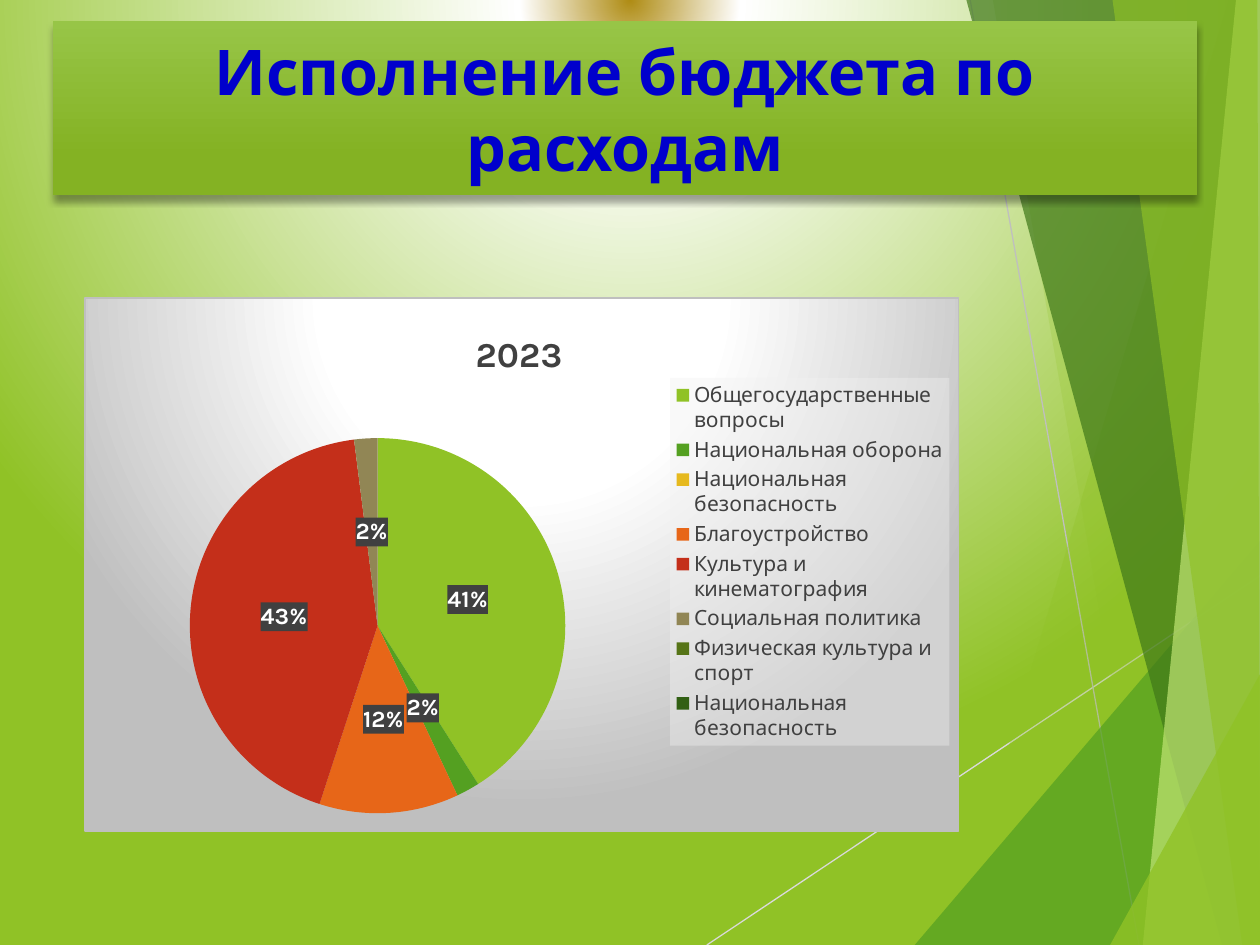
"""Build a slide showing budget spending by section as a pie chart."""
from pptx import Presentation
from pptx.chart.data import CategoryChartData
from pptx.dml.color import RGBColor
from pptx.enum.chart import XL_CHART_TYPE, XL_LABEL_POSITION, XL_LEGEND_POSITION
from pptx.enum.shapes import MSO_CONNECTOR
from pptx.enum.text import MSO_ANCHOR, PP_ALIGN
from pptx.oxml import parse_xml
from pptx.oxml.ns import qn
from pptx.util import Inches, Pt

TITLE = "Исполнение бюджета по расходам"
YEAR = "2023"
SPENDING = [
    ("Общегосударственные вопросы", 41, "90C226"),
    ("Национальная оборона", 2, "54A021"),
    ("Национальная безопасность", 0, "E6B91E"),
    ("Благоустройство", 12, "E76618"),
    ("Культура и кинематография", 43, "C42F1A"),
    ("Социальная политика", 2, "918655"),
    ("Физическая культура и спорт", 0, "567417"),
    ("Национальная безопасность", 0, "326014"),
]
UNLABELLED = (2, 6)
THEME = {
    "font": "Karla", "title": "0000CC", "text": "404040", "label": "FFFFFF",
    "line": "BFBFBF", "legend": "F2F2F2",
    "title_size": 36, "year_size": 20, "legend_size": 12, "label_size": 13.3,
    "background": [(0, "AF8C14"), (14, "FFFFFF"), (100, "90C226")],
    "banner": [(0, "97C547"), (78, "84B223")],
    "panel": [(0, "FFFFFF"), (39, "FFFFFF"), (100, "BFBFBF")],
}
RAYS = [((5.61, 7.5), (10, 4.57), "D9D9D9"), ((7.7, 0), (9.04, 7.5), "BFBFBF")]
LEFT_FACET = ([(0, 4.39), (0.49, 7.5), (0, 7.5)], "90C226", 85)
RIGHT_FACETS = [
    ([(9.75, 0), (7.54, 7.5), (10, 7.5), (10, 0)], "90C226", 30),
    ([(7.88, 0), (9.19, 7.5), (10, 7.5), (10, 0)], "90C226", 20),
    ([(7.26, 7.5), (10, 4.29), (10, 7.5)], "54A021", 72),
    ([(7.67, 0), (9.7, 7.5), (10, 7.5), (10, 0)], "3F7819", 70),
    ([(9.81, 0), (9.07, 7.5), (10, 7.5), (10, 0)], "C0E474", 70),
    ([(8.83, 0), (9.86, 7.5), (10, 7.5), (9.98, 0)], "90C226", 65),
    ([(8.81, 7.5), (10, 5.35), (10, 7.5)], "90C226", 80),
]
A = 'xmlns:a="http://schemas.openxmlformats.org/drawingml/2006/main"'
C = 'xmlns:c="http://schemas.openxmlformats.org/drawingml/2006/chart"'
CIRCLE = '<a:path path="circle"><a:fillToRect l="50000" t="-80000" r="50000" b="180000"/></a:path>'
DOWNWARD = '<a:lin ang="5400000" scaled="0"/>'


def gradient(stops, direction):
    marks = "".join(f'<a:gs pos="{position * 1000}"><a:srgbClr val="{color}"/></a:gs>'
                    for position, color in stops)
    return f'<a:gradFill {A} rotWithShape="1"><a:gsLst>{marks}</a:gsLst>{direction}</a:gradFill>'


def solid(color, opacity):
    return (f'<a:solidFill {A}><a:srgbClr val="{color}">'
            f'<a:alpha val="{opacity * 1000}"/></a:srgbClr></a:solidFill>')


def chart_properties(content):
    return parse_xml(f"<c:spPr {C} {A}>{content}</c:spPr>")


def set_layout(element, index, inner=False, **place):
    for old in element.findall(qn("c:layout")):
        element.remove(old)
    target = '<c:layoutTarget val="inner"/>' if inner else ""
    modes = '<c:xMode val="edge"/><c:yMode val="edge"/>'
    values = "".join(f'<c:{key} val="{value}"/>' for key, value in place.items())
    element.insert(index, parse_xml(
        f"<c:layout {C}><c:manualLayout>{target}{modes}{values}</c:manualLayout></c:layout>"))


def style_font(font, size, color, bold=False):
    font.name, font.size, font.bold = THEME["font"], Pt(size), bold
    font.color.rgb = RGBColor.from_string(color)


def add_facet(slide, points, color, opacity):
    corners = [(Inches(x), Inches(y)) for x, y in points]
    builder = slide.shapes.build_freeform(*corners[0])
    builder.add_line_segments(corners[1:], close=True)
    facet = builder.convert_to_shape()
    facet.shadow.inherit = False
    facet.fill.solid()
    facet.fill.fore_color.rgb = RGBColor.from_string(color)
    facet.fill._xPr.find(qn("a:solidFill"))[0].append(
        parse_xml(f'<a:alpha {A} val="{opacity * 1000}"/>'))
    facet.line.fill.background()


def add_ray(slide, start, end, color):
    ray = slide.shapes.add_connector(MSO_CONNECTOR.STRAIGHT, *map(Inches, start + end))
    ray.line.color.rgb = RGBColor.from_string(color)
    ray.line.width = Pt(0.75)
    ray._element.spPr.append(parse_xml(f"<a:effectLst {A}/>"))


def format_title(slide):
    title = slide.shapes.title
    title.left, title.top, title.width, title.height = map(Inches, (0.42, 0.17, 9.08, 1.38))
    properties = title._element.spPr
    for part in (
        f'<a:prstGeom {A} prst="rect"><a:avLst/></a:prstGeom>',
        gradient(THEME["banner"], DOWNWARD),
        f'<a:effectLst {A}><a:outerShdw blurRad="50800" dist="38100" dir="5400000" rotWithShape="0">'
        '<a:srgbClr val="000000"><a:alpha val="35000"/></a:srgbClr></a:outerShdw></a:effectLst>',
    ):
        properties.append(parse_xml(part))
    frame = title.text_frame
    frame.text = TITLE
    frame.word_wrap = True
    frame.vertical_anchor = MSO_ANCHOR.MIDDLE
    paragraph = frame.paragraphs[0]
    paragraph.alignment = PP_ALIGN.CENTER
    style_font(paragraph.runs[0].font, THEME["title_size"], THEME["title"], True)
    slide.shapes._spTree.append(title._element)


def add_spending_chart(slide):
    data = CategoryChartData()
    data.categories = [name for name, _, _ in SPENDING]
    data.add_series("Series 1", [value for _, value, _ in SPENDING])
    chart = slide.shapes.add_chart(
        XL_CHART_TYPE.PIE, *map(Inches, (0.67, 2.36, 6.94, 4.24)), data).chart
    style_font(chart.font, 10, "000000")
    border = f'<a:ln w="9525">{solid(THEME["line"], 100)}</a:ln>'
    chart._chartSpace.find(qn("c:chart")).addnext(
        chart_properties(gradient(THEME["panel"], CIRCLE) + border))

    chart.has_title = True
    chart.chart_title.text_frame.text = YEAR
    year = chart.chart_title.text_frame.paragraphs[0].runs[0]
    style_font(year.font, THEME["year_size"], THEME["text"], True)
    set_layout(chart.chart_title._element, 1, x=0.44, y=0.05)

    chart.has_legend = True
    legend = chart.legend
    legend.position = XL_LEGEND_POSITION.RIGHT
    legend.include_in_layout = False
    style_font(legend.font, THEME["legend_size"], THEME["text"])
    set_layout(legend._element, 1, x=0.67, y=0.15, w=0.32, h=0.69)
    legend._element.find(qn("c:txPr")).addprevious(
        chart_properties(solid(THEME["legend"], 39)))

    plot = chart.plots[0]
    plot.vary_by_categories = True
    set_layout(chart._chartSpace.find(f'{qn("c:chart")}/{qn("c:plotArea")}'), 0, True,
               x=0.12, y=0.26, w=0.43, h=0.71)
    series = plot.series[0]
    for index, (_, _, color) in enumerate(SPENDING):
        fill = series.points[index].format.fill
        fill.solid()
        fill.fore_color.rgb = RGBColor.from_string(color)

    labels = series.data_labels
    labels.show_percentage, labels.show_value = True, False
    labels.number_format, labels.number_format_is_linked = "0%", False
    labels.position = XL_LABEL_POSITION.CENTER
    style_font(labels.font, THEME["label_size"], THEME["label"], True)
    labels._element.find(qn("c:txPr")).addprevious(
        chart_properties(solid(THEME["text"], 90)))
    for place, index in enumerate(UNLABELLED):
        labels._element.insert(place, parse_xml(
            f'<c:dLbl {C}><c:idx val="{index}"/><c:delete val="1"/></c:dLbl>'))


def main():
    presentation = Presentation()
    presentation.slide_width, presentation.slide_height = Inches(10), Inches(7.5)
    slide = presentation.slides.add_slide(presentation.slide_layouts[5])
    background = slide.background.fill
    background.solid()
    color = background._xPr.find(qn("a:solidFill"))
    background._xPr.replace(color, parse_xml(gradient(THEME["background"], CIRCLE)))
    add_facet(slide, *LEFT_FACET)
    for ray in RAYS:
        add_ray(slide, *ray)
    for facet in RIGHT_FACETS:
        add_facet(slide, *facet)
    format_title(slide)
    add_spending_chart(slide)
    presentation.save("out.pptx")


if __name__ == "__main__":
    main()
